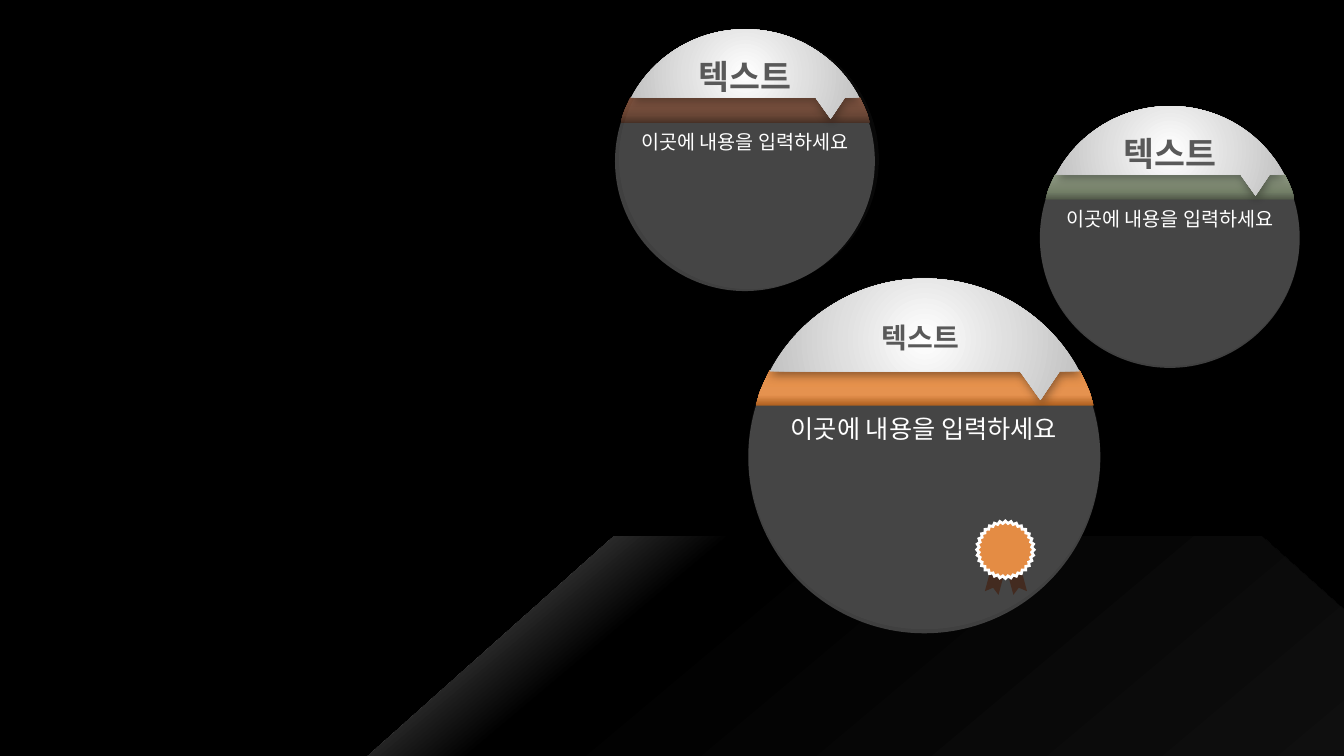
from pptx import Presentation, oxml, util as u
from pptx.dml import color
from pptx.enum import shapes, text
from pptx.oxml import ns

Pt = u.Pt
KIND = shapes.MSO_SHAPE
ALIGN = text.PP_ALIGN

DISC_SIZE = 185.6
AXIS = 93
BAND_SIDE = [(174.6, 46.8), (176.7, 51.1), (178.6, 55), (180.2, 59.2), (182, 65.5)]
BAND_CURVES = (1, 7)
CAP_SIDE = [(AXIS, -1.4), (128.3, -1.4), (159.1, 18.2), (174.6, 47.5)]
CAP_CURVES = (1, 7)
POINTER = [(164.2, 47.5), (154, 62.6), (143.3, 47.5)]

SMALL = {
    "size": 185.6,
    "body": ((10.4, 66.9, 165, 41), 14, ALIGN.CENTER, True),
    "title": ((46.8, 13.9, 92.2, 36), 24, ALIGN.CENTER, True),
}
LARGE = {
    "size": 251.5,
    "body": ((14.2, 90.7, 222.5, 29), 18, ALIGN.CENTER, False),
    "title": ((88.4, 24.5, 75, 31.5), 20, ALIGN.LEFT, False),
}


def rgb(code):
    return color.RGBColor.from_string(code)


def assign(target, values):
    for name, value in values.items():
        setattr(target, name, value)


def mirrored(points):
    return [(2 * AXIS - x, y) for x, y in reversed(points)]


class Stage:
    font = "Calibri"
    body_color = "FFFFFF"
    title_color = "595959"
    disc_color = "404040"
    ribbon_color = "432B20"

    def __init__(self, slide):
        self.slide = slide
        self.layer = slide.shapes

    def start_group(self):
        self.layer = self.slide.shapes.add_group_shape().shapes

    def shape(self, kind, box, fill=None, adjustments=(), rotation=0, alpha=None):
        item = self.layer.add_shape(kind, *map(Pt, box))
        assign(item, {"rotation": rotation})
        for index, value in enumerate(adjustments):
            item.adjustments[index] = value
        item.line.fill.background()
        item.shadow.inherit = False
        if fill:
            item.fill.solid()
            item.fill.fore_color.rgb = rgb(fill)
        if alpha:
            tint = item._element.spPr.find(".//" + ns.qn("a:srgbClr"))
            tint.append(oxml.parse_xml(
                f'<a:alpha {ns.nsdecls("a")} val="{alpha * 1000}"/>'))
        return item

    def outline(self, points, curves, origin, scale):
        placed = [(Pt(origin[0] + x * scale), Pt(origin[1] + y * scale))
                  for x, y in points]
        builder = self.layer.build_freeform(*placed[0], scale=1.0)
        builder.add_line_segments(placed[1:], close=True)
        item = builder.convert_to_shape()
        segments = list(item._element.spPr.iter(ns.qn("a:lnTo")))
        for first in curves:
            bend = oxml.parse_xml(f'<a:cubicBezTo {ns.nsdecls("a")}/>')
            segments[first - 1].addprevious(bend)
            for segment in segments[first - 1:first + 2]:
                bend.append(segment[0])
                segment.getparent().remove(segment)
        item.line.fill.background()
        item.shadow.inherit = False
        return item

    def gradient(self, item, stops, angle=None):
        marks = "".join(f'<a:gs pos="{position * 1000}"><a:srgbClr val="{rgb(code)}"/></a:gs>'
                        for position, code in stops)
        if angle is None:
            course = ('<a:path path="circle"><a:fillToRect l="50000" t="50000" '
                      'r="50000" b="50000"/></a:path>')
        else:
            course = f'<a:lin ang="{angle * 60000}" scaled="0"/>'
        item.fill.background()
        properties = item._element.spPr
        properties.replace(properties.find(ns.qn("a:noFill")), oxml.parse_xml(
            f'<a:gradFill {ns.nsdecls("a")} rotWithShape="1">'
            f'<a:gsLst>{marks}</a:gsLst>{course}</a:gradFill>'))

    def shadow(self, item, code, alpha, blur, distance, angle):
        effects = item._element.spPr.find(ns.qn("a:effectLst"))
        effects.append(oxml.parse_xml(
            f'<a:outerShdw {ns.nsdecls("a")} blurRad="{Pt(blur)}" dist="{Pt(distance)}" '
            f'dir="{angle * 60000}" algn="ctr" rotWithShape="0"><a:srgbClr val="{rgb(code)}">'
            f'<a:alpha val="{alpha * 1000}"/></a:srgbClr></a:outerShdw>'))

    def label(self, words, origin, layout, code, bold=False):
        (left, top, width, height), size, alignment, wrap = layout
        box = self.layer.add_textbox(Pt(origin[0] + left), Pt(origin[1] + top),
                                     Pt(width), Pt(height))
        assign(box.text_frame, {"word_wrap": wrap,
                                "auto_size": text.MSO_AUTO_SIZE.SHAPE_TO_FIT_TEXT})
        paragraph = box.text_frame.paragraphs[0]
        paragraph.alignment = alignment
        run = paragraph.add_run()
        run.text = words
        assign(run.font, {"name": self.font, "size": Pt(size), "bold": bold})
        run.font.color.rgb = rgb(code)

    def badge(self, origin, layout, band_colors, gloss_shift):
        left, top = origin
        size = layout["size"]
        scale = size / DISC_SIZE
        self.start_group()
        self.shape(KIND.OVAL, (left, top, size, size), self.disc_color)

        band = self.outline(BAND_SIDE + mirrored(BAND_SIDE), BAND_CURVES, origin, scale)
        self.gradient(band, list(zip((0, 30, 100), band_colors)), 270)

        cap_points = CAP_SIDE + POINTER + mirrored(CAP_SIDE)
        cap = self.outline(cap_points, (1, 8), origin, scale)
        self.gradient(cap, [(0, "FFFFFF"), (99, "BFBFBF")])
        self.shadow(cap, "000000", alpha=40, blur=7, distance=3, angle=80)

        shift_x, shift_y = gloss_shift
        self.shape(KIND.OVAL, (left + shift_x, top + shift_y, size, size),
                   "FFFFFF", alpha=3)
        self.label("이곳에 내용을 입력하세요", origin, layout["body"], self.body_color)
        self.label("텍스트", origin, layout["title"], self.title_color, bold=True)

    def rosette(self):
        for left, rotation in ((697.7, 285), (710.6, 255)):
            self.shape(KIND.NOTCHED_RIGHT_ARROW, (left, 404.6, 28.8, 10.1),
                       self.ribbon_color, (1, 0.39), rotation)
        seal = self.shape(KIND.STAR_32_POINT, (697.7, 372.2, 41, 41), "E48C44", (0.46,))
        seal.line.color.rgb = rgb("FFFFFF")
        seal.line.width = Pt(2)
        seal._element.spPr.find(ns.qn("a:ln")).append(
            oxml.parse_xml(f'<a:miter {ns.nsdecls("a")} lim="800000"/>'))


def main():
    deck = Presentation()
    assign(deck, {"slide_width": Pt(960), "slide_height": Pt(540)})
    slide = deck.slides.add_slide(deck.slide_layouts[6])
    slide.background.fill.solid()
    slide.background.fill.fore_color.rgb = rgb("000000")

    stage = Stage(slide)
    floor = stage.shape(KIND.TRAPEZOID, (262.8, 383, 814.3, 157), adjustments=(1.12,))
    stage.gradient(floor, [(0, "808080"), (26, "000000"), (100, "111111")], 50)

    stage.badge((439.3, 22.3), SMALL, ("432B20", "654130", "865640"), (2.9, -1.4))
    stage.badge((534.5, 200.9), LARGE, ("AD5C19", "E58F4A", "E48C44"), (0, -2.9))
    stage.rosette()
    stage.badge((742.8, 77.2), SMALL, ("4A5242", "6F7B63", "94A088"), (0, -1.4))
    deck.save("out.pptx")


if __name__ == "__main__":
    main()
